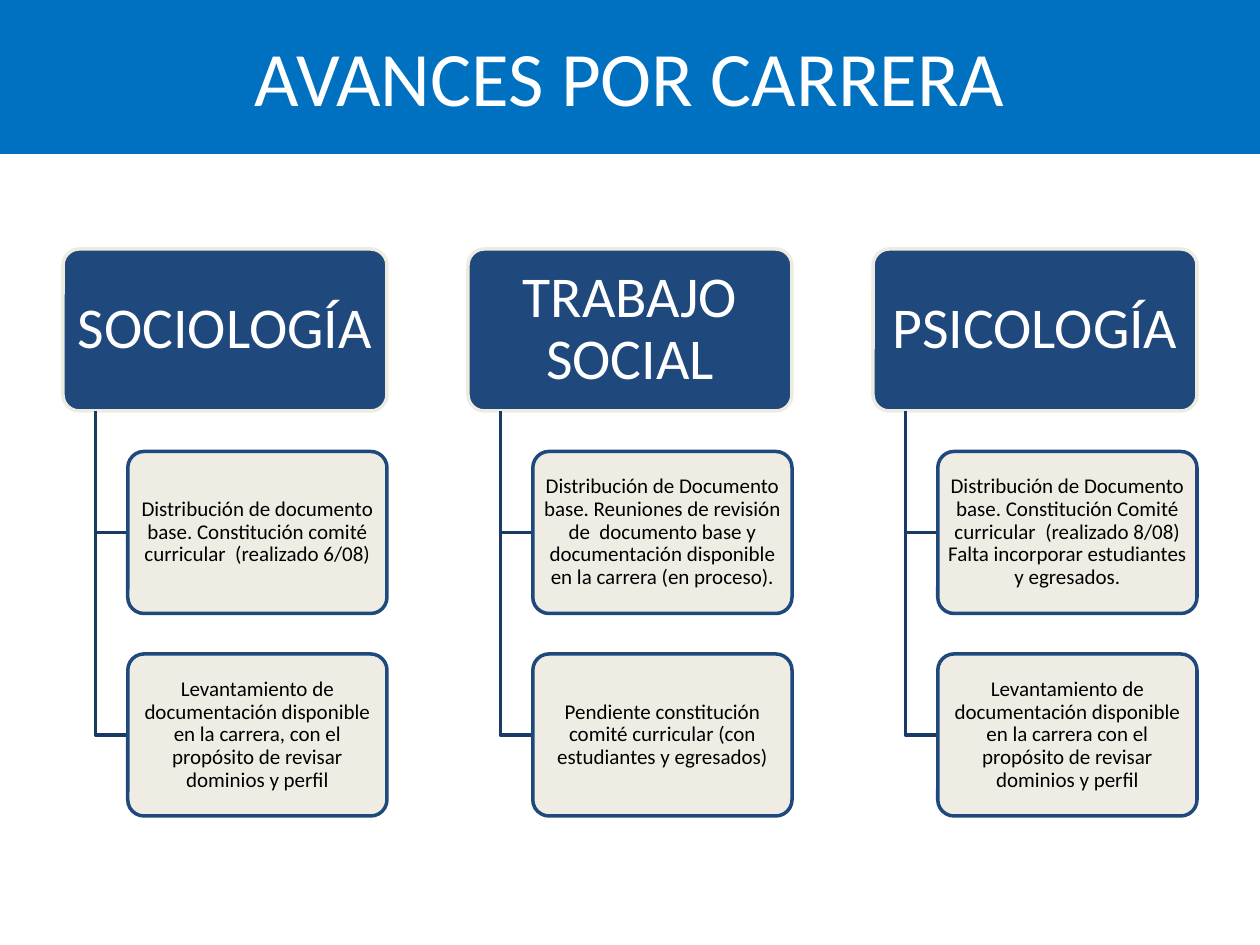
from lxml import etree
from pptx import Presentation
from pptx import util as u
from pptx.dml.color import RGBColor
from pptx.enum import shapes, text
from pptx.oxml import ns

COLORS = {
    "banner": "0070C0",
    "navy": "1F497D",
    "branch": "193A64",
    "cream": "EEECE1",
    "white": "FFFFFF",
    "black": "000000",
}
FONT = "Calibri"

# Three columns separated by a quarter of their width; boxes are half as tall as wide.
LEFT, TOP, TOTAL_WIDTH = 36, 142.3, 648
COLUMN_WIDTH = TOTAL_WIDTH / 3.5
COLUMN_PITCH = COLUMN_WIDTH * 1.25
BOX_HEIGHT = COLUMN_WIDTH / 2
ROW_PITCH = BOX_HEIGHT * 1.25
BRANCH_INDENT = COLUMN_WIDTH / 10
TASK_INDENT = COLUMN_WIDTH / 5

CAREERS = [
    ("SOCIOLOGÍA", [
        "Distribución de documento base. Constitución comité curricular  (realizado 6/08)",
        "Levantamiento de documentación disponible en la carrera, con el propósito de "
        "revisar dominios y perfil",
    ]),
    ("TRABAJO SOCIAL", [
        "Distribución de Documento base. Reuniones de revisión de  documento base y "
        "documentación disponible en la carrera (en proceso).",
        "Pendiente constitución comité curricular (con estudiantes y egresados)",
    ]),
    ("PSICOLOGÍA", [
        "Distribución de Documento base. Constitución Comité curricular  (realizado 8/08) "
        "Falta incorporar estudiantes y egresados.",
        "Levantamiento de documentación disponible en la carrera con el propósito de "
        "revisar dominios y perfil",
    ]),
]


def color(name):
    return RGBColor.from_string(COLORS[name])


def set_opacity(shape, percent):
    fill_color = shape.fill._xPr.find(ns.qn("a:solidFill"))[0]
    etree.SubElement(fill_color, ns.qn("a:alpha"), val=str(percent * 1000))


def write_text(shape, wording, size, color_name, line_spacing=1.0):
    frame = shape.text_frame
    frame.word_wrap = True
    frame.vertical_anchor = text.MSO_ANCHOR.MIDDLE
    paragraph = frame.paragraphs[0]
    paragraph.alignment = text.PP_ALIGN.CENTER
    paragraph.line_spacing = line_spacing
    run = paragraph.add_run()
    run.text = wording
    run.font.name = FONT
    run.font.size = u.Pt(size)
    run.font.color.rgb = color(color_name)


def add_banner(slide, wording):
    banner = slide.shapes.add_shape(
        shapes.MSO_SHAPE.RECTANGLE, u.Pt(0), u.Pt(-2), u.Pt(720), u.Pt(90))
    banner.shadow.inherit = False
    banner.fill.solid()
    banner.fill.fore_color.rgb = color("banner")
    banner.line.fill.background()
    write_text(banner, wording, 44, "white")


def add_box(slide, left, top, width, wording, size, fill, line, font_color):
    """Add a rounded box whose text margins grow with the text size."""
    box = slide.shapes.add_shape(
        shapes.MSO_SHAPE.ROUNDED_RECTANGLE,
        u.Pt(left), u.Pt(top), u.Pt(width), u.Pt(BOX_HEIGHT))
    box.adjustments[0] = 0.1
    box.shadow.inherit = False
    box.fill.solid()
    box.fill.fore_color.rgb = color(fill)
    box.line.color.rgb = color(line)
    box.line.width = u.Pt(2)
    frame = box.text_frame
    frame.margin_left = frame.margin_right = u.Pt(size * 0.15)
    frame.margin_top = frame.margin_bottom = u.Pt(size * 0.1)
    write_text(box, wording, size, font_color, 0.9)
    return box


def add_branch(slide, left, top, right, bottom):
    """Add an L-shaped line that goes down and then right."""
    builder = slide.shapes.build_freeform(u.Pt(left), u.Pt(top))
    builder.add_line_segments(
        [(u.Pt(left), u.Pt(bottom)), (u.Pt(right), u.Pt(bottom))], close=False)
    branch = builder.convert_to_shape()
    branch.shadow.inherit = False
    branch.fill.background()
    branch.line.color.rgb = color("branch")
    branch.line.width = u.Pt(2)


def add_career(slide, left, name, tasks):
    add_box(slide, left, TOP, COLUMN_WIDTH, name, 33, "navy", "cream", "white")
    task_left = left + TASK_INDENT
    for row, task in enumerate(tasks, start=1):
        task_top = TOP + row * ROW_PITCH
        add_branch(slide, left + BRANCH_INDENT, TOP + BOX_HEIGHT,
                   task_left, task_top + BOX_HEIGHT / 2)
        box = add_box(slide, task_left, task_top, COLUMN_WIDTH - TASK_INDENT,
                      task, 12, "cream", "navy", "black")
        set_opacity(box, 90)


def main():
    presentation = Presentation()
    presentation.slide_width = u.Pt(720)
    presentation.slide_height = u.Pt(540)
    slide = presentation.slides.add_slide(presentation.slide_layouts[6])
    add_banner(slide, "AVANCES POR CARRERA")
    for column, (name, tasks) in enumerate(CAREERS):
        add_career(slide, LEFT + column * COLUMN_PITCH, name, tasks)
    presentation.save("out.pptx")


if __name__ == "__main__":
    main()
